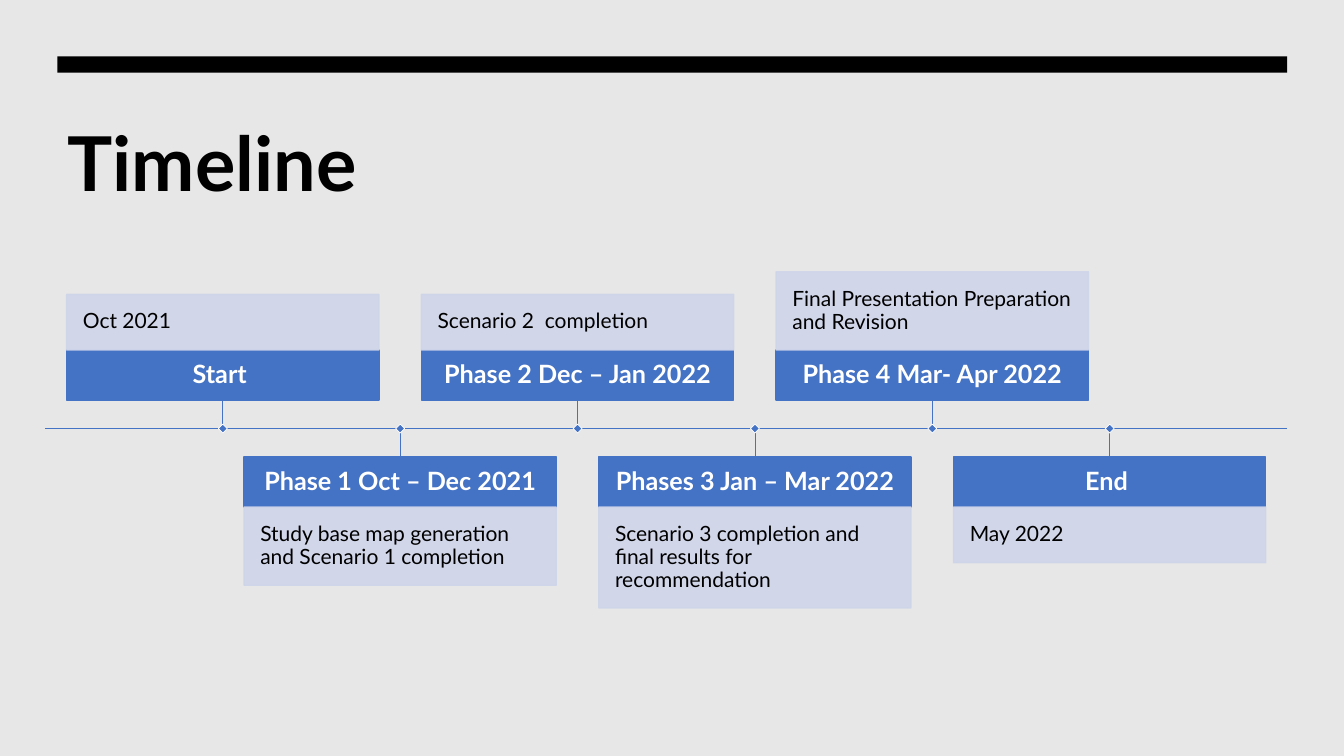
"""Build a slide with a project timeline of six alternating phases."""
from dataclasses import dataclass

from lxml.etree import SubElement
from pptx import Presentation
from pptx.dml.color import RGBColor
from pptx.enum.shapes import MSO_CONNECTOR, MSO_SHAPE
from pptx.enum.text import MSO_ANCHOR, MSO_AUTO_SIZE, PP_ALIGN
from pptx.oxml.ns import qn
from pptx.shapes.autoshape import Shape
from pptx.slide import Slide
from pptx.text.text import TextFrame
from pptx.util import Cm, Pt

FONT = "Lato"
BLACK = RGBColor(0x00, 0x00, 0x00)
WHITE = RGBColor(0xFF, 0xFF, 0xFF)
BLUE = RGBColor(0x44, 0x72, 0xC4)
PALE = RGBColor(0xCF, 0xD5, 0xEA)
GREY = RGBColor(0xE8, 0xE7, 0xE7)

AXIS_Y = 10.8
FIRST_X = 1.68
STEP = 4.47
BOX_W = 7.87
HEAD_H = 1.26
STEM = 0.72
PAD_H = 0.83
LINE_H = 0.57
MARK = 0.16


@dataclass
class Phase:
    head: str
    detail: str
    lines: int


PHASES = [
    Phase("Start ", "Oct 2021", 1),
    Phase("Phase 1 Oct – Dec 2021", "Study base map generation and Scenario 1 completion", 2),
    Phase("Phase 2 Dec – Jan 2022", "Scenario 2  completion", 1),
    Phase("Phases 3 Jan – Mar 2022", "Scenario 3 completion and final results for recommendation", 3),
    Phase("Phase 4 Mar- Apr 2022", "Final Presentation Preparation and Revision", 2),
    Phase("End ", "May 2022", 1),
]


def write(tf: TextFrame, text: str, size: float, color: RGBColor,
          bold: bool, align: PP_ALIGN) -> None:
    tf.word_wrap = True
    tf.auto_size = MSO_AUTO_SIZE.NONE
    tf.vertical_anchor = MSO_ANCHOR.MIDDLE
    p = tf.paragraphs[0]
    p.alignment = align
    p.line_spacing = 0.9
    r = p.add_run()
    r.text = text
    r.font.name = FONT
    r.font.size = Pt(size)
    r.font.bold = bold
    r.font.color.rgb = color


def add_rect(s: Slide, x: float, y: float, w: float, h: float,
             fill: RGBColor, line: RGBColor, line_pt: float = 1) -> Shape:
    sp = s.shapes.add_shape(MSO_SHAPE.RECTANGLE, Cm(x), Cm(y), Cm(w), Cm(h))
    sp.shadow.inherit = False
    sp.fill.solid()
    sp.fill.fore_color.rgb = fill
    sp.line.color.rgb = line
    sp.line.width = Pt(line_pt)
    return sp


def add_box(s: Slide, x: float, y: float, h: float, fill: RGBColor, margin: float) -> Shape:
    sp = add_rect(s, x, y, BOX_W, h, fill, fill)
    tf = sp.text_frame
    tf.margin_left = tf.margin_right = tf.margin_top = tf.margin_bottom = Cm(margin)
    return sp


def add_line(s: Slide, x1: float, y1: float, x2: float, y2: float, width: float) -> None:
    line = s.shapes.add_connector(MSO_CONNECTOR.STRAIGHT, Cm(x1), Cm(y1), Cm(x2), Cm(y2))
    line.line.color.rgb = BLUE
    line.line.width = Pt(width)
    SubElement(line._element.spPr, qn("a:effectLst"))


def set_alpha(sp: Shape, percent: int) -> None:
    for color in sp._element.spPr.iter(qn("a:srgbClr")):
        SubElement(color, qn("a:alpha")).set("val", str(percent * 1000))


def add_phase(s: Slide, index: int, phase: Phase) -> None:
    x = FIRST_X + index * STEP
    mid = x + BOX_W / 2
    detail_h = PAD_H + LINE_H * phase.lines
    if index % 2 == 0:
        stem_y = AXIS_Y - STEM
        head_y = stem_y - HEAD_H
        detail_y = head_y - detail_h
    else:
        stem_y = AXIS_Y + STEM
        head_y = stem_y
        detail_y = head_y + HEAD_H
    head = add_box(s, x, head_y, HEAD_H, BLUE, 0.25)
    write(head.text_frame, phase.head, 18, WHITE, True, PP_ALIGN.CENTER)
    detail = add_box(s, x, detail_y, detail_h, PALE, 0.41)
    set_alpha(detail, 90)
    write(detail.text_frame, phase.detail, 15, BLACK, False, PP_ALIGN.LEFT)
    add_line(s, mid, stem_y, mid, AXIS_Y, 0.5)
    marker = add_rect(s, mid - MARK / 2, AXIS_Y - MARK / 2, MARK, MARK, BLUE, WHITE, 0.5)
    marker.rotation = 45


def main() -> None:
    prs = Presentation()
    prs.slide_width, prs.slide_height = Cm(33.87), Cm(19.05)
    s = prs.slides.add_slide(prs.slide_layouts[5])
    s.background.fill.solid()
    s.background.fill.fore_color.rgb = GREY

    bar = add_rect(s, 1.45, 1.42, 30.99, 0.41, BLACK, BLACK)
    bar.line.fill.background()
    title = s.shapes.title
    title.left, title.top, title.width, title.height = Cm(1.45), Cm(2.72), Cm(31.01), Cm(2.97)
    write(title.text_frame, "Timeline", 54, BLACK, True, PP_ALIGN.LEFT)

    add_line(s, 1.14, AXIS_Y, 32.44, AXIS_Y, 1)
    for index, phase in enumerate(PHASES):
        add_phase(s, index, phase)
    prs.save("out.pptx")


if __name__ == "__main__":
    main()
